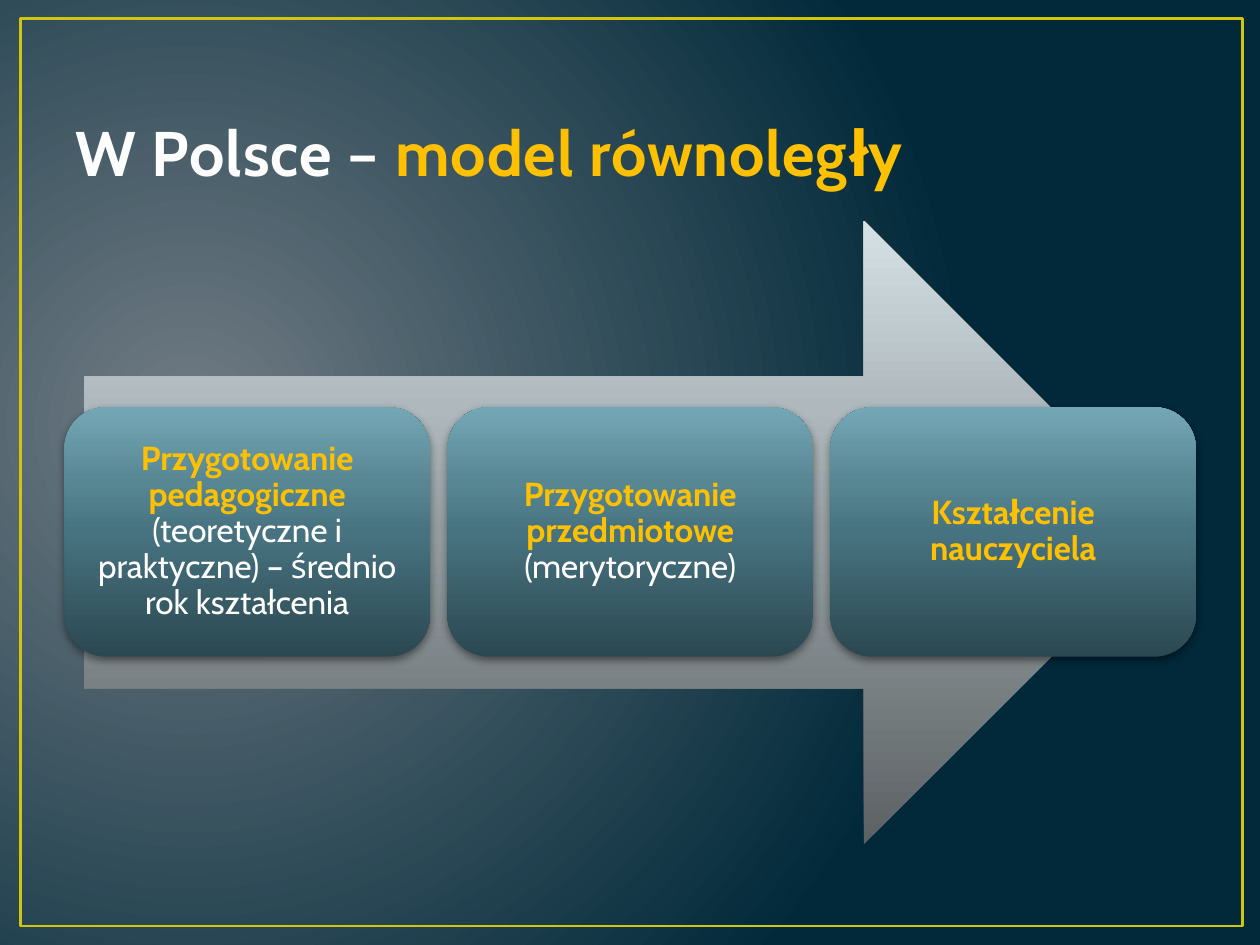
from lxml import etree
from pptx import Presentation
from pptx import util as u
from pptx.dml.color import RGBColor
from pptx.enum import shapes, text
from pptx.oxml.ns import qn

HEX = {
    "gold": "FFC000", "white": "FFFFFF", "title": "FEFEFE", "frame": "CFC60D",
    "shade": "000000",
}
NIGHT = [(0, "717C84"), (100, "01293A")]
STEEL = [(0, "5C6264"), (50, "949EA1"), (70, "AFB9BD"), (100, "D5E1E5")]
TEAL = [(0, "2B4851"), (50, "477380"), (70, "588794"), (100, "74A7B6")]


def add(node, tag, **attrs):
    return etree.SubElement(node, qn(tag), {k: str(v) for k, v in attrs.items()})


class Deck:
    font = "Cabin"

    def __init__(self, prs):
        self.slide = prs.slides.add_slide(prs.slide_layouts[6])

    def blend(self, fill, root, stops):
        """Gradient with any number of stops, running upwards."""
        fill.gradient()
        fill.gradient_angle = 90
        grad = root.find(".//" + qn("a:gradFill"))
        line = grad.find(qn("a:gsLst"))
        for old in list(line):
            line.remove(old)
        for pos, tone in stops:
            add(add(line, "a:gs", pos=pos * 1000), "a:srgbClr", val=tone)
        return grad

    def backdrop(self, stops, left, top, right, bottom):
        grad = self.blend(self.slide.background.fill, self.slide.element, stops)
        grad.remove(grad.find(qn("a:lin")))
        way = add(grad, "a:path", path="circle")
        add(way, "a:fillToRect", l=left * 1000, t=top * 1000,
            r=right * 1000, b=bottom * 1000)

    def shape(self, kind, box, stops=None):
        item = self.slide.shapes.add_shape(kind, *map(u.Cm, box))
        item.shadow.inherit = False
        item.line.fill.background()
        if stops:
            self.blend(item.fill, item.element, stops)
        else:
            item.fill.background()
        return item

    def frame(self, box):
        item = self.shape(shapes.MSO_SHAPE.RECTANGLE, box)
        item.line.color.rgb = RGBColor.from_string(HEX["frame"])
        item.line.width = u.Pt(1.5)

    def words(self, body, parts, size):
        """Fill the first paragraph with (words, colour, bold) runs."""
        body.word_wrap = True
        para = body.paragraphs[0]
        para.font.name, para.font.size = self.font, u.Pt(size)
        for label, tone, bold in parts:
            run = para.add_run()
            run.text = label
            run.font.name, run.font.size = self.font, u.Pt(size)
            run.font.bold = bold
            run.font.color.rgb = RGBColor.from_string(HEX[tone])
        return para

    def title(self, box, parts):
        body = self.slide.shapes.add_textbox(*map(u.Cm, box)).text_frame
        body.vertical_anchor = text.MSO_ANCHOR.BOTTOM
        para = self.words(body, parts, 36)
        for mark in para._p.iter(qn("a:rPr")):
            mark.set("spc", "50")

    def card(self, box, parts):
        item = self.shape(shapes.MSO_SHAPE.ROUNDED_RECTANGLE, box, TEAL)
        glow = item.element.spPr.find(qn("a:effectLst"))
        cast = add(glow, "a:outerShdw", blurRad=u.Pt(5), dist=u.Pt(2),
                   dir=90 * 60000, rotWithShape=0)
        add(add(cast, "a:srgbClr", val=HEX["shade"]), "a:alpha", val=43000)
        body = item.text_frame
        body.margin_left = body.margin_right = u.Cm(0.2)
        body.margin_top = body.margin_bottom = u.Cm(0.2)
        body.vertical_anchor = text.MSO_ANCHOR.MIDDLE
        para = self.words(body, parts, 19)
        para.alignment = text.PP_ALIGN.CENTER
        para.line_spacing = 0.9


def main():
    prs = Presentation()
    prs.slide_width, prs.slide_height = u.Cm(25.4), u.Cm(19.05)
    deck = Deck(prs)

    # Background and border
    deck.backdrop(NIGHT, 15, 50, 85, 60)
    deck.frame((0.41, 0.38, 24.64, 18.29))

    # Title
    deck.title((1.27, 0.76, 22.86, 3.18), [
        ("W Polsce – ", "title", True), ("model równoległy", "gold", True)])

    # Arrow behind the cards
    deck.shape(shapes.MSO_SHAPE.RIGHT_ARROW, (1.7, 4.45, 22, 12.57), STEEL)

    # Three cards at equal steps
    cards = [
        ("Przygotowanie pedagogiczne ",
         "(teoretyczne i praktyczne) – średnio rok kształcenia"),
        ("Przygotowanie przedmiotowe ", "(merytoryczne)"),
        ("Kształcenie nauczyciela", ""),
    ]
    for i, (head, rest) in enumerate(cards):
        parts = [(head, "gold", True)]
        if rest:
            parts.append((rest, "white", False))
        deck.card((1.3 + i * 7.72, 8.21, 7.37, 5.03), parts)

    prs.save("out.pptx")


if __name__ == "__main__":
    main()
